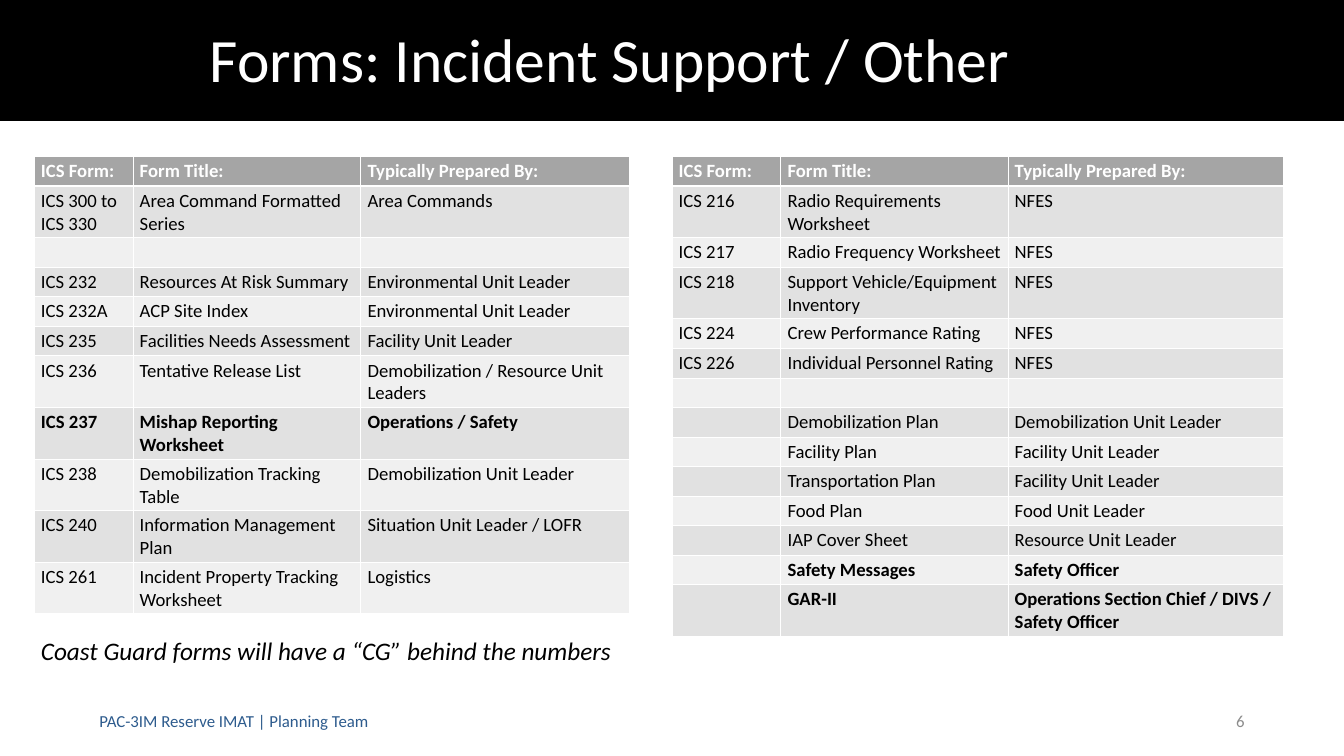
from dataclasses import dataclass

from lxml.etree import SubElement
from pptx import Presentation
from pptx.dml.color import RGBColor
from pptx.enum.shapes import MSO_SHAPE as Shape
from pptx.enum.text import MSO_ANCHOR as Anchor, PP_ALIGN as Align
from pptx.oxml.ns import qn
from pptx.util import Inches, Pt

# Content
TITLE = "Forms: Incident Support / Other"
NOTE = "Coast Guard forms will have a “CG” behind the numbers"
FOOTER = "PAC-3IM Reserve IMAT | Planning Team"
PAGE = "6"
HEADER = ("ICS Form:", "Form Title:", "Typically Prepared By:")
BLANK = ("", "", "")
INCIDENT_FORMS = [
    ("ICS 300 to ICS 330", "Area Command Formatted Series", "Area Commands"),
    BLANK,
    ("ICS 232", "Resources At Risk Summary", "Environmental Unit Leader"),
    ("ICS 232A", "ACP Site Index", "Environmental Unit Leader"),
    ("ICS 235", "Facilities Needs Assessment", "Facility Unit Leader"),
    ("ICS 236", "Tentative Release List", "Demobilization / Resource Unit Leaders"),
    ("ICS 237", "Mishap Reporting Worksheet", "Operations / Safety"),
    ("ICS 238", "Demobilization Tracking Table", "Demobilization Unit Leader"),
    ("ICS 240", "Information Management Plan", "Situation Unit Leader / LOFR"),
    ("ICS 261", "Incident Property Tracking Worksheet", "Logistics"),
]
OTHER_FORMS = [
    ("ICS 216", "Radio Requirements Worksheet", "NFES"),
    ("ICS 217", "Radio Frequency Worksheet", "NFES"),
    ("ICS 218", "Support Vehicle/Equipment Inventory", "NFES"),
    ("ICS 224", "Crew Performance Rating", "NFES"),
    ("ICS 226", "Individual Personnel Rating", "NFES"),
    BLANK,
    ("", "Demobilization Plan", "Demobilization Unit Leader"),
    ("", "Facility Plan", "Facility Unit Leader"),
    ("", "Transportation Plan", "Facility Unit Leader"),
    ("", "Food Plan", "Food Unit Leader"),
    ("", "IAP Cover Sheet", "Resource Unit Leader"),
    ("", "Safety Messages", "Safety Officer"),
    ("", "GAR-II", "Operations Section Chief / DIVS / Safety Officer"),
]
KEY_FORMS = {"Mishap Reporting Worksheet", "Safety Messages", "GAR-II"}


@dataclass(frozen=True)
class Theme:
    font: str = "Calibri"
    black: str = "000000"
    white: str = "FFFFFF"
    header: str = "A5A5A5"
    bands: tuple = ("E1E1E1", "F0F0F0")
    footer: str = "2D5B8D"
    page: str = "8C8C8C"
    title_size: int = 66
    note_size: int = 27
    table_size: int = 20
    footer_size: int = 18


THEME = Theme()

# Layout, in inches
WIDTH, HEIGHT = 20, 11.25
BAR_HEIGHT = 0.16 * HEIGHT
LEFT, TABLE_TOP, ROW_HEIGHT = 0.51, 2.33, 0.44
FOOTER_TOP, FOOTER_HEIGHT = 10.43, 0.6
TABLES = [
    (LEFT, (1.47, 3.39, 3.99), INCIDENT_FORMS),
    (WIDTH / 2, (1.62, 3.38, 4.1), OTHER_FORMS),
]


def style(paragraph, size, color, bold=False, italic=False):
    for run in paragraph.runs:
        font = run.font
        font.name, font.size = THEME.font, Pt(size)
        font.bold, font.italic = bold, italic
        font.color.rgb = RGBColor.from_string(color)


def add_text(slide, box, text, size, color, anchor=Anchor.MIDDLE,
             align=Align.LEFT, italic=False):
    frame = slide.shapes.add_textbox(*map(Inches, box)).text_frame
    frame.word_wrap = True
    frame.vertical_anchor = anchor
    frame.text = text
    frame.paragraphs[0].alignment = align
    style(frame.paragraphs[0], size, color, italic=italic)


def add_borders(cell, bottom):
    properties = cell._tc.get_or_add_tcPr()
    for side, width in (("L", 1), ("R", 1), ("T", 1), ("B", bottom)):
        line = SubElement(properties, qn(f"a:ln{side}"), w=str(Pt(width)))
        fill = SubElement(line, qn("a:solidFill"))
        SubElement(fill, qn("a:srgbClr"), val=THEME.white)


def add_forms_table(slide, left, widths, forms):
    rows = [HEADER, *forms]
    table = slide.shapes.add_table(
        len(rows), len(widths), Inches(left), Inches(TABLE_TOP),
        Inches(sum(widths)), Inches(ROW_HEIGHT * len(rows))).table
    for column, width in zip(table.columns, widths):
        column.width = Inches(width)
    for row_index, row in enumerate(rows):
        is_header = row_index == 0
        background = THEME.header if is_header else THEME.bands[(row_index - 1) % 2]
        color = THEME.white if is_header else THEME.black
        bold = is_header or row[1] in KEY_FORMS
        for column_index, text in enumerate(row):
            cell = table.cell(row_index, column_index)
            cell.text = text
            style(cell.text_frame.paragraphs[0], THEME.table_size, color, bold)
            add_borders(cell, bottom=3 if is_header else 1)
            cell.fill.solid()
            cell.fill.fore_color.rgb = RGBColor.from_string(background)


def add_title(slide):
    # Black bar, placed behind the title
    bar = slide.shapes.add_shape(Shape.RECTANGLE, 0, 0, Inches(WIDTH), Inches(BAR_HEIGHT))
    bar.shadow.inherit = False
    bar.fill.solid()
    bar.fill.fore_color.rgb = RGBColor.from_string(THEME.black)
    bar.line.fill.background()
    title = slide.shapes.title
    title._element.addprevious(bar._element)

    title.left, title.top, title.width, title.height = map(Inches, (3.02, 0.05, 16.62, 1.77))
    frame = title.text_frame
    frame.text = TITLE
    frame.vertical_anchor = Anchor.MIDDLE
    paragraph = frame.paragraphs[0]
    paragraph.alignment = Align.LEFT
    paragraph.line_spacing = 0.9
    style(paragraph, THEME.title_size, THEME.white)


def main():
    presentation = Presentation()
    presentation.slide_width, presentation.slide_height = Inches(WIDTH), Inches(HEIGHT)
    slide = presentation.slides.add_slide(presentation.slide_layouts.get_by_name("Title Only"))

    add_title(slide)

    # Footer and page number
    add_text(slide, (1.38, FOOTER_TOP, 9.1, FOOTER_HEIGHT), FOOTER,
             THEME.footer_size, THEME.footer)
    add_text(slide, (14.12, FOOTER_TOP, 4.5, FOOTER_HEIGHT), PAGE,
             THEME.footer_size, THEME.page, align=Align.RIGHT)

    # Form tables and the note below the left one
    for left, widths, forms in TABLES:
        add_forms_table(slide, left, widths, forms)
    add_text(slide, (LEFT, 9.4, sum(TABLES[0][1]), 0.56), NOTE,
             THEME.note_size, THEME.black, anchor=Anchor.TOP, italic=True)

    presentation.save("out.pptx")


if __name__ == "__main__":
    main()
